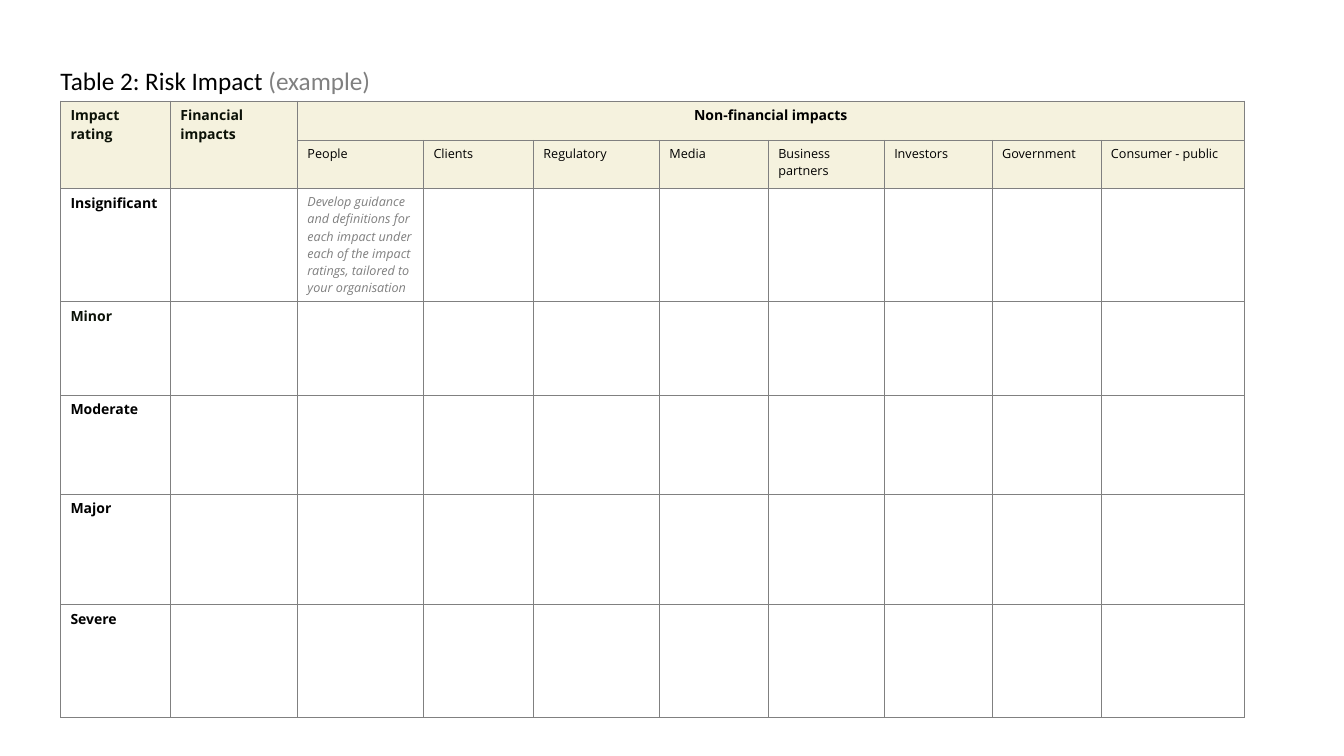
import pptx
import pptx.dml.color
import pptx.enum.text
import pptx.util
from lxml import etree
from pptx.oxml.ns import qn
from pptx.util import Inches

COLORS = {
    "black": "000000",
    "ink": "0B1107",
    "grey": "808080",
    "cream": "F5F2DE",
    "white": "FFFFFF",
}
COLUMN_WIDTHS = [1.09, 1.26, 1.25, 1.09, 1.25, 1.08, 1.15, 1.07, 1.08, 1.42]
ROW_HEIGHTS = [0.39, 0.39, 1.09, 0.93, 0.98, 1.1, 1.12]
IMPACTS = ["People", "Clients", "Regulatory", "Media", "Business partners",
           "Investors", "Government", "Consumer - public"]
RATINGS = ["Insignificant", "Minor", "Moderate", "Major", "Severe"]
GUIDANCE = ("Develop guidance and definitions for each impact under each of "
            "the impact ratings, tailored to your organisation")


def rgb(name):
    return pptx.dml.color.RGBColor.from_string(COLORS[name])


def add_title(slide, text, note):
    s = slide.shapes.title
    s.left, s.top = Inches(0.5), Inches(0.6)
    s.width, s.height = Inches(4.43), Inches(0.4)
    tf = s.text_frame
    tf.word_wrap = True
    tf.auto_size = pptx.enum.text.MSO_AUTO_SIZE.NONE
    tf.vertical_anchor = pptx.enum.text.MSO_ANCHOR.TOP
    p = tf.paragraphs[0]
    p.alignment = pptx.enum.text.PP_ALIGN.LEFT
    p.font.size = pptx.util.Pt(18)
    p.font.name = "Calibri"
    for words, color in ((text, "black"), (note, "grey")):
        r = p.add_run()
        r.text = words
        r.font.color.rgb = rgb(color)


def set_borders(cell):
    tc_pr = cell._tc.get_or_add_tcPr()
    for side in ("a:lnL", "a:lnR", "a:lnT", "a:lnB"):
        ln = etree.SubElement(tc_pr, qn(side), w=str(pptx.util.Pt(0.25)))
        fill = etree.SubElement(ln, qn("a:solidFill"))
        etree.SubElement(fill, qn("a:srgbClr"), val=COLORS["grey"])


def style_cell(cell, fill):
    set_borders(cell)
    if fill:
        cell.fill.solid()
        cell.fill.fore_color.rgb = rgb(fill)
    else:
        cell.fill.background()
    cell.text_frame.paragraphs[0].font.size = pptx.util.Pt(9)


def write_cell(cell, text, size=9, color="black", bold=False, italic=False):
    p = cell.text_frame.paragraphs[0]
    p.text = text
    p.font.name = "Open Sans"
    p.font.size = pptx.util.Pt(size)
    p.font.color.rgb = rgb(color)
    p.font.bold = bold
    p.font.italic = italic
    return p


def add_grid(slide):
    frame = slide.shapes.add_table(
        len(ROW_HEIGHTS), len(COLUMN_WIDTHS), Inches(0.6), Inches(1),
        Inches(sum(COLUMN_WIDTHS)), Inches(sum(ROW_HEIGHTS)))
    table = frame.table
    table.first_row = table.horz_banding = False
    for column, width in zip(table.columns, COLUMN_WIDTHS):
        column.width = Inches(width)
    for i, (row, height) in enumerate(zip(table.rows, ROW_HEIGHTS)):
        row.height = Inches(height)
        for j, cell in enumerate(row.cells):
            style_cell(cell, "cream" if i < 2 else "white" if j else None)
    return table


def fill_table(table):
    for j, heading in enumerate(("Impact rating", "Financial impacts")):
        table.cell(0, j).merge(table.cell(1, j))
        write_cell(table.cell(0, j), heading, 10, "ink", bold=True)
    table.cell(0, 2).merge(table.cell(0, 9))
    p = write_cell(table.cell(0, 2), "Non-financial impacts", 10, bold=True)
    p.alignment = pptx.enum.text.PP_ALIGN.CENTER
    for j, impact in enumerate(IMPACTS, 2):
        write_cell(table.cell(1, j), impact)
    for i, rating in enumerate(RATINGS, 2):
        color = "ink" if rating == "Minor" else "black"
        write_cell(table.cell(i, 0), rating, 10, color, bold=True)
    write_cell(table.cell(2, 2), GUIDANCE, color="grey", italic=True)


def main():
    prs = pptx.Presentation()
    prs.slide_width, prs.slide_height = Inches(13.33), Inches(7.5)
    slide = prs.slides.add_slide(prs.slide_layouts.get_by_name("Title Only"))
    fill_table(add_grid(slide))
    add_title(slide, "Table 2: Risk Impact ", "(example)")
    prs.save("out.pptx")


if __name__ == "__main__":
    main()
